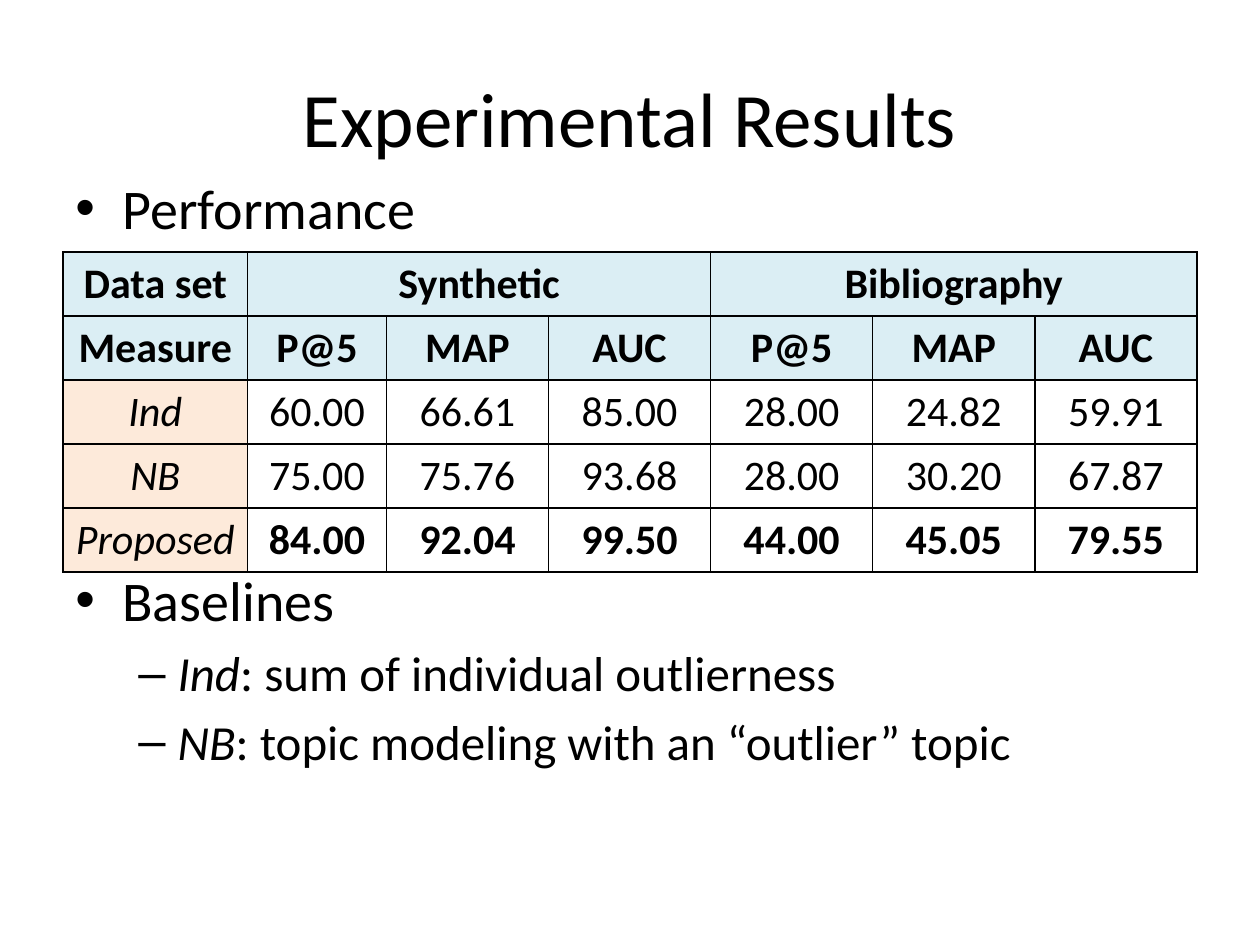
from lxml import etree
from pptx import Presentation
from pptx.dml.color import RGBColor
from pptx.enum import text
from pptx.oxml.ns import qn
from pptx.util import Cm, Pt

FONT = "Calibri"
COLORS = {"ink": "000000", "header": "DBEEF4", "method": "FDEADA"}

TITLE = "Experimental Results"
# Each bullet: level, then (text, italic) spans
PERFORMANCE = [(0, [("Performance", False)])]
BASELINES = [
    (0, [("Baselines", False)]),
    (1, [("Ind", True), (": sum of individual outlierness", False)]),
    (1, [("NB", True), (": topic modeling with an “outlier” topic", False)]),
]
# Bullet sign, text size, left margin and hanging indent in cm
LEVELS = [("•", 32, 0.95, 0.95), ("–", 28, 2.06, 0.79)]

MEASURES = ["P@5", "MAP", "AUC"]
DATA_SETS = ["Synthetic", "Bibliography"]
SCORES = [
    ("Ind", "60.00", "66.61", "85.00", "28.00", "24.82", "59.91"),
    ("NB", "75.00", "75.76", "93.68", "28.00", "30.20", "67.87"),
    ("Proposed", "84.00", "92.04", "99.50", "44.00", "45.05", "79.55"),
]

LEFT, WIDTH = 1.27, 22.86
TABLE_TOP, ROW_HEIGHT = 5.08, 1.29
FIRST_COLUMNS = [3.72, 2.8]


def add_span(para, words, size, bold=False, italic=False, color="ink"):
    span = para.add_run()
    span.text = words
    font = span.font
    font.name, font.size, font.bold, font.italic = FONT, Pt(size), bold, italic
    font.color.rgb = RGBColor.from_string(COLORS[color])


def add_box(page, top, height, anchor=text.MSO_ANCHOR.TOP):
    box = page.shapes.add_textbox(Cm(LEFT), Cm(top), Cm(WIDTH), Cm(height))
    frame = box.text_frame
    frame.word_wrap = True
    frame.vertical_anchor = anchor
    return frame


def add_bullets(page, top, height, bullets):
    frame = add_box(page, top, height)
    for i, (level, spans) in enumerate(bullets):
        sign, size, margin, hanging = LEVELS[level]
        para = frame.add_paragraph() if i else frame.paragraphs[0]
        para.level = level
        para.space_before = Pt(0.2 * size)
        props = para._p.get_or_add_pPr()
        props.set("marL", str(Cm(margin)))
        props.set("indent", str(-Cm(hanging)))
        etree.SubElement(props, qn("a:buFont"), typeface="Arial")
        etree.SubElement(props, qn("a:buChar"), char=sign)
        for words, italic in spans:
            add_span(para, words, size, italic=italic)


def add_borders(cell):
    props = cell._tc.get_or_add_tcPr()
    for side in ("lnL", "lnR", "lnT", "lnB"):
        line = etree.SubElement(props, qn(f"a:{side}"), w=str(Pt(1)))
        fill = etree.SubElement(line, qn("a:solidFill"))
        etree.SubElement(fill, qn("a:srgbClr"), val=COLORS["ink"])


def fill_cell(cell, words, fill=None, **style):
    add_borders(cell)
    if fill:
        cell.fill.solid()
        cell.fill.fore_color.rgb = RGBColor.from_string(COLORS[fill])
    else:
        cell.fill.background()
    cell.vertical_anchor = text.MSO_ANCHOR.MIDDLE
    if words:
        para = cell.text_frame.paragraphs[0]
        para.alignment = text.PP_ALIGN.CENTER
        add_span(para, words, 24, **style)


def add_results(page):
    group = len(MEASURES)
    header = ["Data set"]
    for name in DATA_SETS:
        header += [name] + [""] * (group - 1)
    rows = [header, ["Measure"] + MEASURES * len(DATA_SETS), *SCORES]
    count = len(header)
    table = page.shapes.add_table(len(rows), count, Cm(LEFT), Cm(TABLE_TOP),
                                  Cm(WIDTH), Cm(ROW_HEIGHT * len(rows))).table
    table.first_row = table.horz_banding = False
    other = (WIDTH - sum(FIRST_COLUMNS)) / (count - len(FIRST_COLUMNS))
    for i, column in enumerate(table.columns):
        column.width = Cm(FIRST_COLUMNS[i] if i < len(FIRST_COLUMNS) else other)
    for r, row in enumerate(rows):
        table.rows[r].height = Cm(ROW_HEIGHT)
        for c, words in enumerate(row):
            if r < 2:
                style = {"fill": "header", "bold": True}
            elif c == 0:
                style = {"fill": "method", "italic": True}
            else:
                style = {"bold": r == len(rows) - 1}
            fill_cell(table.cell(r, c), words, **style)
    for start in range(1, count, group):
        table.cell(0, start).merge(table.cell(0, start + group - 1))


def main():
    deck = Presentation()
    deck.slide_width, deck.slide_height = Cm(25.4), Cm(19.05)
    page = deck.slides.add_slide(deck.slide_layouts[6])
    title = add_box(page, 0.76, 3.18, text.MSO_ANCHOR.MIDDLE).paragraphs[0]
    title.alignment = text.PP_ALIGN.CENTER
    add_span(title, TITLE, 44)
    add_bullets(page, 3.38, 1.7, PERFORMANCE)
    add_bullets(page, 11.28, 6.9, BASELINES)
    add_results(page)
    deck.save("out.pptx")


if __name__ == "__main__":
    main()
